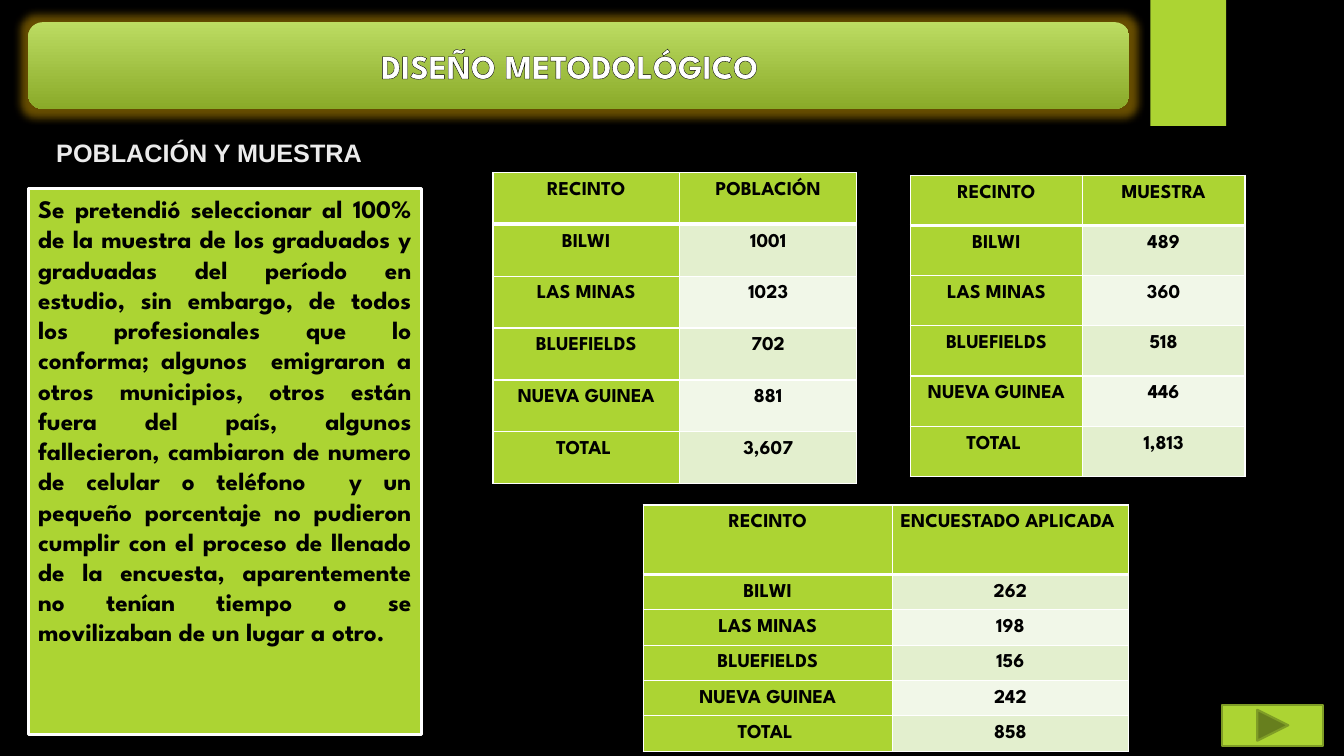
import pptx
import pptx.util
import pptx.dml.color
import pptx.enum.shapes
import pptx.enum.text
import pptx.oxml
import pptx.oxml.ns

WIDTH, HEIGHT = 13.33, 7.5
LIME, WHITE, BLACK = "ACD433", "FFFFFF", "000000"
BANDS = ["E3EFCE", "F1F7E8"]
SITES = ["BILWI", "LAS MINAS", "BLUEFIELDS", "NUEVA GUINEA", "TOTAL "]
SHAPE = pptx.enum.shapes.MSO_SHAPE
ALIGN = pptx.enum.text.PP_ALIGN
ANCHOR = pptx.enum.text.MSO_ANCHOR
BODY = (
    "Se pretendió seleccionar al 100% de la muestra de los graduados y graduadas "
    "del período en estudio, sin embargo, de todos los profesionales que lo conforma; "
    "algunos  emigraron a otros municipios, otros están fuera del país, algunos "
    "fallecieron, cambiaron de numero de celular o teléfono  y un pequeño porcentaje "
    "no pudieron cumplir con el proceso de llenado de la encuesta, aparentemente no "
    "tenían tiempo o se movilizaban de un lugar a otro."
)


def color(value):
    return pptx.dml.color.RGBColor.from_string(value)


def across(share):
    return pptx.util.Inches(WIDTH * share / 100)


def down(share):
    return pptx.util.Inches(HEIGHT * share / 100)


def place(x, y, w, h):
    return across(x), down(y), across(w), down(h)


def apply(target, values):
    for name, value in values.items():
        setattr(target, name, value)


def element(xml):
    return pptx.oxml.parse_xml(xml.replace(">", f" {pptx.oxml.ns.nsdecls('a')}>", 1))


def line_xml(tag, hex_value, points):
    return element(
        f'<a:{tag} w="{int(points * 12700)}"><a:solidFill>'
        f'<a:srgbClr val="{hex_value}"/></a:solidFill></a:{tag}>'
    )


def write(tf, text, size, hex_value, align, face="League Spartan", spacing=1.0):
    p = tf.paragraphs[0]
    apply(p, {"alignment": align, "line_spacing": spacing})
    r = p.add_run()
    r.text = text
    apply(r.font, {"size": pptx.util.Pt(size), "name": face, "bold": True})
    r.font.color.rgb = color(hex_value)
    return r


def add_block(s, kind, box, fill, line=None, weight=1):
    sp = s.shapes.add_shape(kind, *place(*box))
    sp.shadow.inherit = False
    sp.fill.solid()
    sp.fill.fore_color.rgb = color(fill)
    if line:
        sp.line.color.rgb = color(line)
        sp.line.width = pptx.util.Pt(weight)
    else:
        sp.line.fill.background()
    return sp


def add_banner(s, text, box):
    sp = add_block(s, SHAPE.ROUNDED_RECTANGLE, box, LIME)
    sp.fill.gradient()
    sp.fill.gradient_angle = 270
    for stop, hex_value in zip(sp.fill.gradient_stops, ["BCDC62", "8AAA29"]):
        stop.color.rgb = color(hex_value)
    effects = sp._element.spPr.find(pptx.oxml.ns.qn("a:effectLst"))
    effects.append(element(
        '<a:glow rad="139700"><a:srgbClr val="FFC000">'
        '<a:alpha val="40000"/></a:srgbClr></a:glow>'
    ))
    tf = sp.text_frame
    apply(tf, {"word_wrap": True, "vertical_anchor": ANCHOR.MIDDLE,
               "margin_right": pptx.util.Inches(0.28)})
    r = write(tf, text, 24, WHITE, ALIGN.CENTER)
    r.font._element.insert(0, line_xml("ln", BLACK, 0.75))


def add_heading(s, text, box):
    tf = s.shapes.add_textbox(*place(*box)).text_frame
    apply(tf, {"word_wrap": True, "vertical_anchor": ANCHOR.BOTTOM})
    write(tf, text, 18, "EBEBEB", ALIGN.LEFT, face="Arial")


def add_panel(s, text, box):
    tf = add_block(s, SHAPE.RECTANGLE, box, LIME, WHITE, 2.25).text_frame
    apply(tf, {"word_wrap": True, "vertical_anchor": ANCHOR.TOP})
    write(tf, text, 18, BLACK, ALIGN.JUSTIFY)


def fill_cell(cell, text, row, col):
    side = pptx.util.Inches(0.07)
    apply(cell, {"margin_left": side, "margin_right": side,
                 "margin_top": 0, "margin_bottom": 0})
    weights = {"lnL": 1, "lnR": 1, "lnT": 3 if row == 1 else 1, "lnB": 3 if row == 0 else 1}
    tc_pr = cell._tc.get_or_add_tcPr()
    for tag, weight in weights.items():
        tc_pr.append(line_xml(tag, WHITE, weight))
    cell.fill.solid()
    cell.fill.fore_color.rgb = color(LIME if row == 0 or col == 0 else BANDS[(row - 1) % 2])
    write(cell.text_frame, text, 14, BLACK, ALIGN.CENTER, spacing=1.5)


def add_count_table(s, heading, counts, left, top, widths, head, height):
    rows = [("RECINTO", heading), *zip(SITES, counts)]
    heights = [head] + [height] * len(SITES)
    box = place(left, top, sum(widths), sum(heights))
    table = s.shapes.add_table(len(rows), len(widths), *box).table
    for column, width in zip(table.columns, widths):
        column.width = across(width)
    for i, (values, row_height) in enumerate(zip(rows, heights)):
        table.rows[i].height = down(row_height)
        for j, text in enumerate(values):
            fill_cell(table.cell(i, j), text, i, j)


def main():
    prs = pptx.Presentation()
    apply(prs, {"slide_width": across(100), "slide_height": down(100)})
    s = prs.slides.add_slide(prs.slide_layouts[6])
    s.background.fill.solid()
    s.background.fill.fore_color.rgb = color(BLACK)

    add_block(s, SHAPE.RECTANGLE, (85.6, 0, 5.63, 16.67), LIME)
    add_banner(s, "DISEÑO METODOLÓGICO", (2.1, 2.93, 81.92, 11.47))
    add_heading(s, "POBLACIÓN Y MUESTRA", (3.45, 18.8, 27.9, 4))
    add_panel(s, BODY, (2.1, 24.93, 29.26, 72.27))
    add_count_table(s, "POBLACIÓN", ["1001", "1023", "702", "881", "3,607"],
                    36.68, 22.8, [13.88, 13.2], 6.87, 6.87)
    add_count_table(s, "MUESTRA", ["489", "360", "518", "446", "1,813"],
                    67.75, 23.2, [12.78, 12.1], 6.64, 6.64)
    add_count_table(s, "ENCUESTADO APLICADA ", ["262", "198", "156", "242", "858"],
                    47.86, 66.8, [18.53, 17.58], 9.2, 4.27)
    add_block(s, SHAPE.ACTION_BUTTON_FORWARD_OR_NEXT, (90.95, 93.2, 7.5, 5.47),
              LIME, "7F9D26", 1.5)
    prs.save("out.pptx")


if __name__ == "__main__":
    main()
